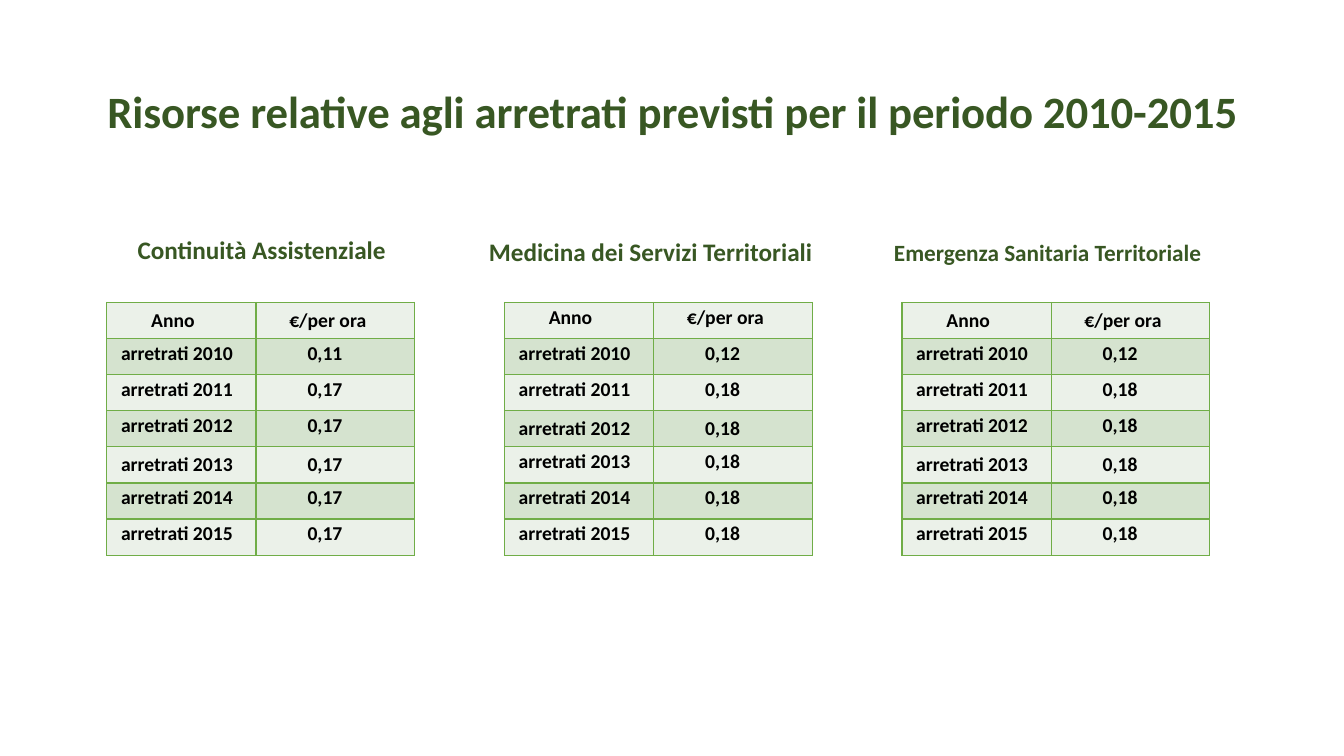
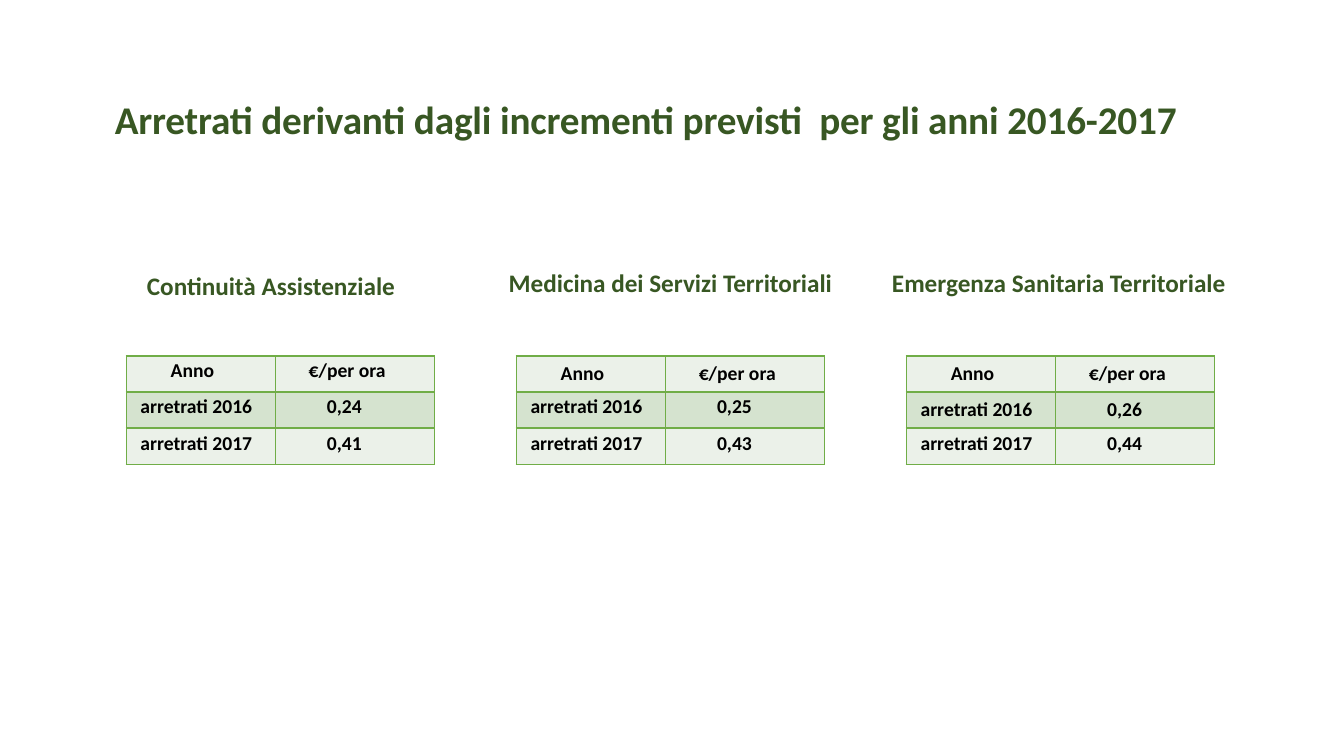
from lxml.etree import SubElement
from pptx import Presentation
from pptx.dml.color import RGBColor
from pptx.enum.text import MSO_ANCHOR, MSO_AUTO_SIZE, PP_ALIGN
from pptx.oxml.ns import qn
from pptx.util import Cm, Pt

DARK_GREEN = RGBColor(0x38, 0x57, 0x23)
BORDER_GREEN = RGBColor(0x70, 0xAD, 0x47)
LIGHT_BAND = RGBColor(0xEB, 0xF1, 0xE9)
DARK_BAND = RGBColor(0xD5, 0xE3, 0xCF)
BLACK = RGBColor(0, 0, 0)
FONT = "Calibri"

COLUMN_WIDTHS = (3.76, 4)
ROW_HEIGHT = 0.91
HEADER = ("Anno", "€/per ora")
HEADER_INDENTS = (1.12, 0.84)
BODY_INDENTS = (0.36, 1.3)

CONTINUITY = "Continuità Assistenziale"
SERVICES = "Medicina dei Servizi Territoriali"
EMERGENCY = "Emergenza Sanitaria Territoriale"


def style_font(paragraph, size, color):
    font = paragraph.font
    font.name = FONT
    font.size = Pt(size)
    font.bold = True
    font.color.rgb = color


def fill_text(shape, text, box, size, alignment=PP_ALIGN.LEFT, anchor=MSO_ANCHOR.MIDDLE):
    shape.left, shape.top, shape.width, shape.height = map(Cm, box)
    frame = shape.text_frame
    frame.word_wrap = True
    frame.auto_size = MSO_AUTO_SIZE.NONE
    frame.vertical_anchor = anchor
    paragraph = frame.paragraphs[0]
    paragraph.text = text
    paragraph.alignment = alignment
    paragraph.line_spacing = 0.9
    style_font(paragraph, size, DARK_GREEN)
    return paragraph


def set_title(slide, text, box, size, alignment):
    paragraph = fill_text(slide.shapes.title, text, box, size, alignment)
    paragraph.runs[0]._r.get_or_add_rPr().set("spc", "-10")


def set_body_heading(slide, text, box):
    paragraph = fill_text(slide.placeholders[1], text, box, 18, PP_ALIGN.CENTER, MSO_ANCHOR.TOP)
    paragraph.space_before = Pt(0)
    properties = paragraph._p.get_or_add_pPr()
    properties.set("marL", "0")
    properties.set("indent", "0")
    properties.insert_element_before(
        properties.makeelement(qn("a:buNone"), {}), "a:tabLst", "a:defRPr", "a:extLst")


def add_heading(slide, text, box, size=18):
    fill_text(slide.shapes.add_textbox(0, 0, 0, 0), text, box, size)


def set_borders(cell, top_width):
    properties = cell._tc.get_or_add_tcPr()
    for side, width in (("L", 1), ("R", 1), ("T", top_width), ("B", 1)):
        line = SubElement(properties, qn(f"a:ln{side}"), w=str(Pt(width)))
        fill = SubElement(line, qn("a:solidFill"))
        SubElement(fill, qn("a:srgbClr"), val=str(BORDER_GREEN))


def fill_cell(cell, text, indent, band, top_width, is_loose):
    set_borders(cell, top_width)
    cell.fill.solid()
    cell.fill.fore_color.rgb = band
    cell.margin_left = Cm(indent)
    cell.margin_right = cell.margin_top = cell.margin_bottom = 0
    cell.vertical_anchor = MSO_ANCHOR.MIDDLE
    paragraph = cell.text_frame.paragraphs[0]
    paragraph.text = text
    if not is_loose:
        paragraph.line_spacing = Pt(12.8)
    style_font(paragraph, 14, BLACK)


def add_rate_table(slide, left, top, first_year, rates, loose_rows):
    rows = [HEADER] + [(f"arretrati {year}", rate) for year, rate in enumerate(rates, first_year)]
    table = slide.shapes.add_table(
        len(rows), len(HEADER), Cm(left), Cm(top),
        Cm(sum(COLUMN_WIDTHS)), Cm(ROW_HEIGHT * len(rows))).table
    table.first_row = table.horz_banding = False
    for column, width in zip(table.columns, COLUMN_WIDTHS):
        column.width = Cm(width)
    for row_index, texts in enumerate(rows):
        table.rows[row_index].height = Cm(ROW_HEIGHT)
        indents = BODY_INDENTS if row_index else HEADER_INDENTS
        band = DARK_BAND if row_index % 2 else LIGHT_BAND
        top_width = 2 if row_index == len(rows) - 1 else 1
        for column_index, (text, indent) in enumerate(zip(texts, indents)):
            fill_cell(table.cell(row_index, column_index), text, indent, band,
                      top_width, row_index in loose_rows)


def add_rate_tables(slide, left, top, step, first_year, tables):
    for index, (rates, loose_rows) in enumerate(tables):
        add_rate_table(slide, left + index * step, top, first_year, rates, loose_rows)


def build_2010_2015(slide):
    set_title(slide, "Risorse relative agli arretrati previsti per il periodo 2010-2015",
              (2.34, 1.02, 29.21, 3.68), 32, PP_ALIGN.CENTER)
    set_body_heading(slide, CONTINUITY, (2.62, 5.87, 7.95, 1.78))
    add_heading(slide, SERVICES, (12.07, 5.33, 8.71, 2.13))
    add_heading(slide, EMERGENCY, (22.28, 5.66, 8.71, 1.47), 16.6)
    add_rate_tables(slide, 2.69, 7.62, 10.02, 2010, (
        (["0,11"] + ["0,17"] * 5, {0, 4}),
        (["0,12"] + ["0,18"] * 5, {3}),
        (["0,12"] + ["0,18"] * 5, {0, 4}),
    ))


def build_2016_2017(slide):
    set_title(slide, "Arretrati derivanti dagli incrementi previsti  per gli anni 2016-2017",
              (2.64, 2.29, 29.21, 1.57), 28, PP_ALIGN.LEFT)
    set_body_heading(slide, CONTINUITY, (2.74, 6.76, 8.18, 1.78))
    add_heading(slide, SERVICES, (12.57, 6.1, 8.99, 2.13))
    add_heading(slide, EMERGENCY, (22.23, 6.43, 8.97, 1.47))
    add_rate_tables(slide, 3.18, 8.97, 9.83, 2016, (
        (["0,24", "0,41"], set()),
        (["0,25", "0,43"], {0}),
        (["0,26", "0,44"], {0, 1}),
    ))


def main():
    presentation = Presentation()
    presentation.slide_width = Cm(33.87)
    presentation.slide_height = Cm(19.05)
    for build in (build_2010_2015, build_2016_2017):
        build(presentation.slides.add_slide(presentation.slide_layouts[1]))
    presentation.save("out.pptx")


if __name__ == "__main__":
    main()
